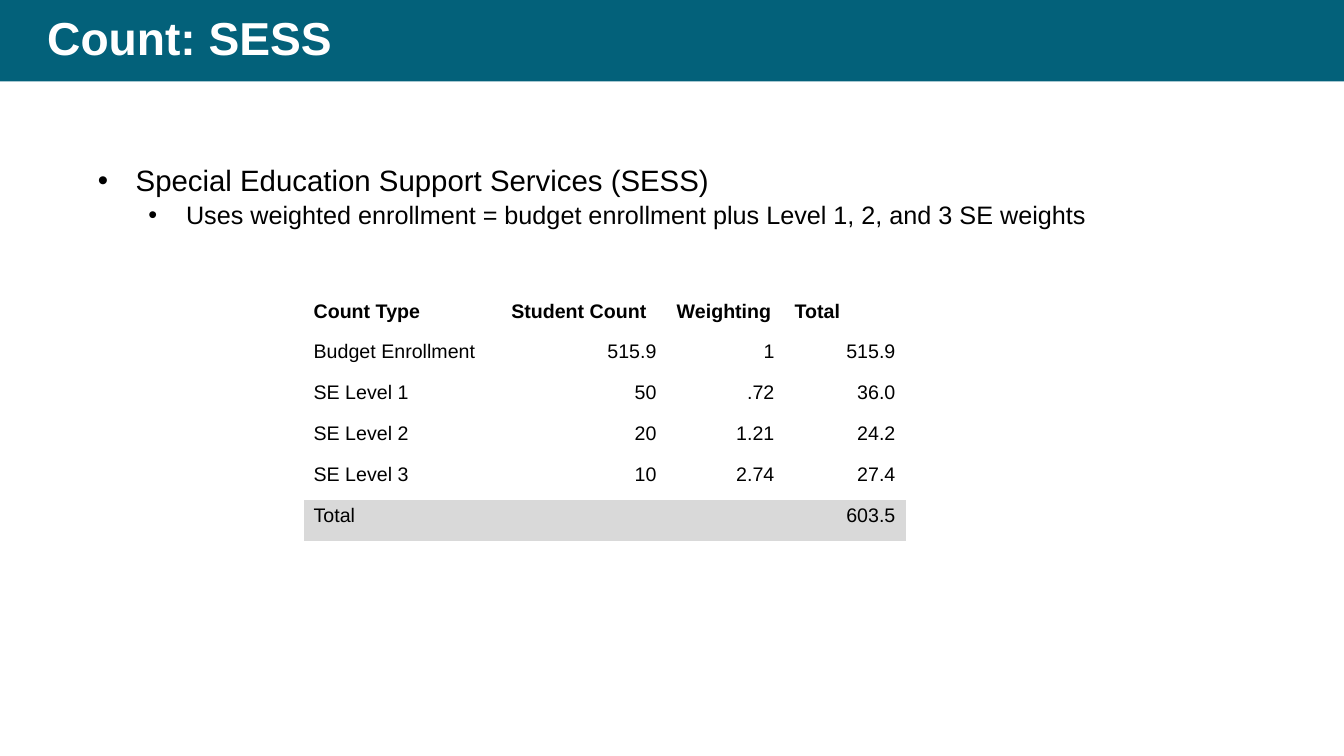
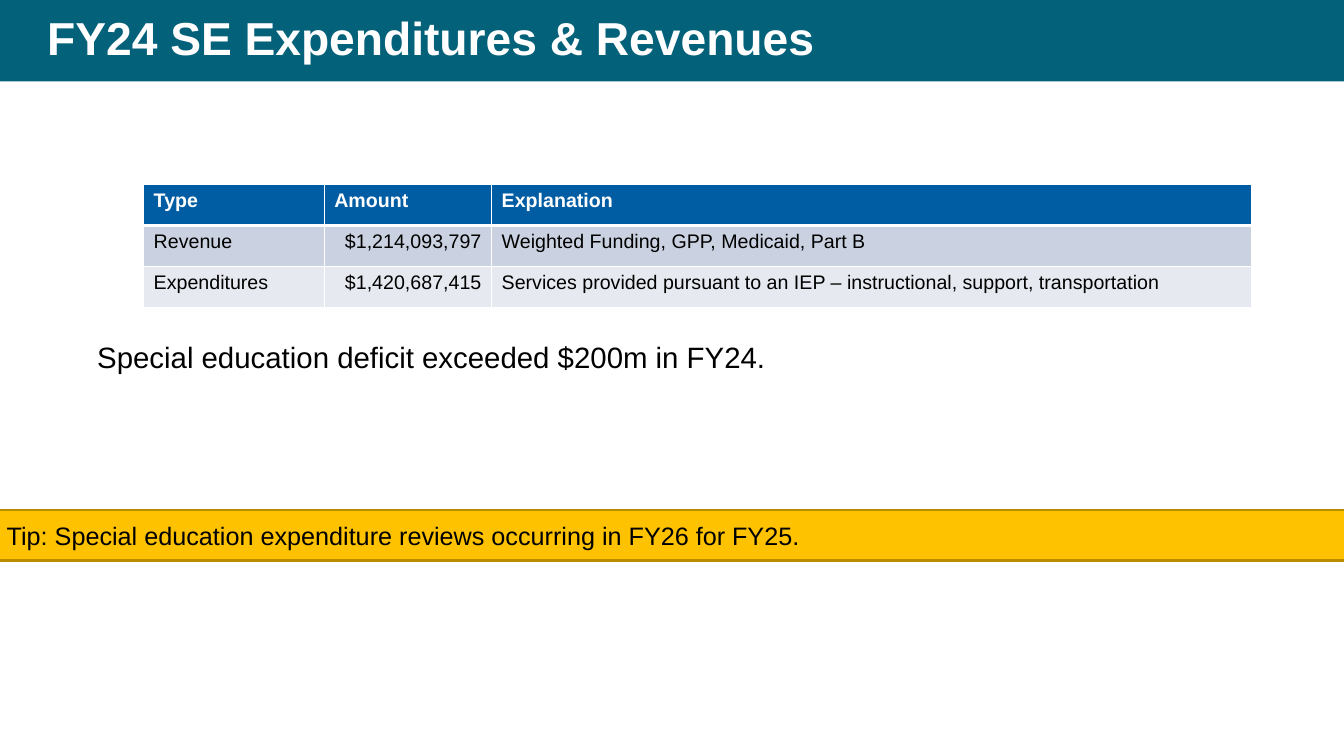
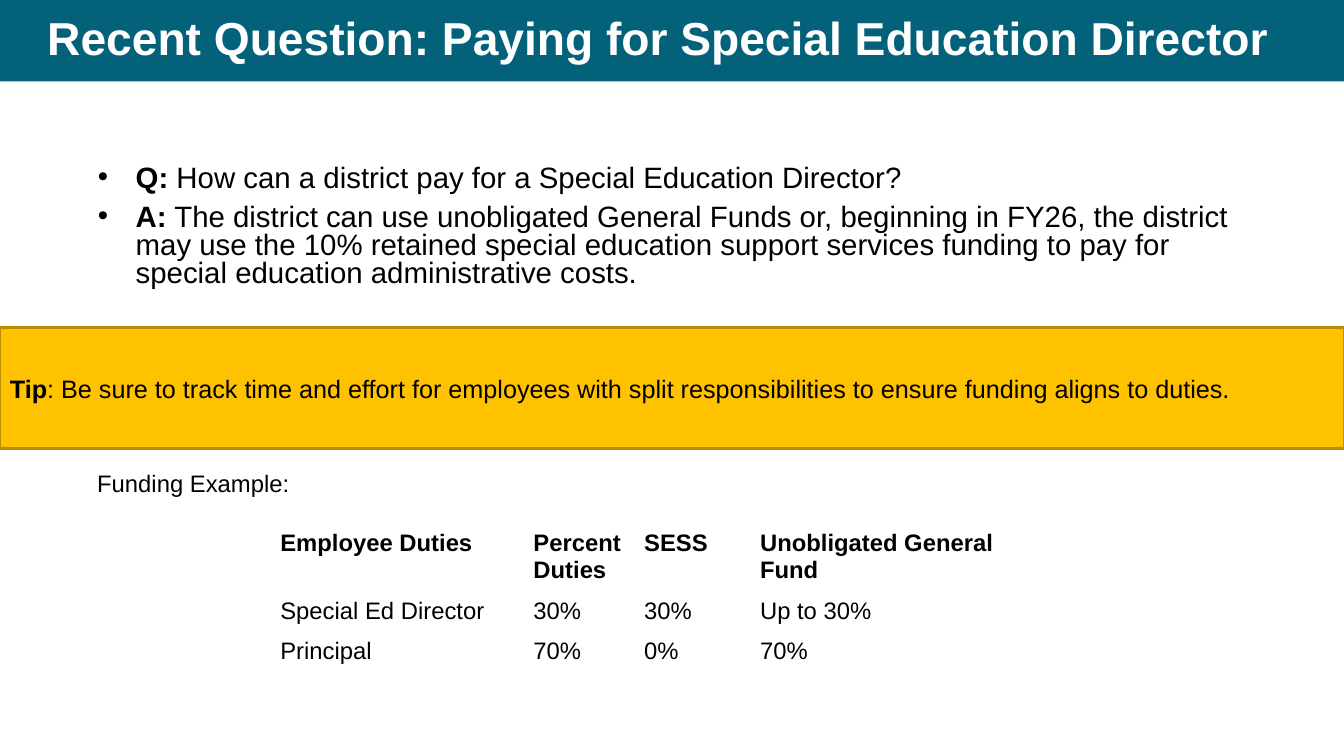
from lxml.etree import SubElement
from pptx import Presentation
from pptx.dml.color import RGBColor
from pptx.enum.shapes import MSO_SHAPE
from pptx.enum.text import MSO_ANCHOR, PP_ALIGN
from pptx.oxml.ns import qn
from pptx.util import Cm, Pt

# Shared look
FONT = "Arial"
COLORS = {
    "band": "03617A", "white": "FFFFFF", "text": "000000",
    "tip": "FFC200", "tip_edge": "BA8D00", "total": "D9D9D9",
    "header": "005CA3", "row_dark": "CAD1E0", "row_light": "E6E9F0",
}
SLIDE_W, SLIDE_H = 33.87, 19.05
BAND_H = 2.05
BODY_LEFT, BODY_TOP, BODY_W = 1.9, 4.06, 30.05
ROW_H = 1.03
NOTE_INDENT = 0.3


def rgb(name):
    return RGBColor.from_string(COLORS[name])


def write(paragraph, text, size, color="text", bold=False, lead=""):
    """Set a paragraph's text, with an optional bold lead-in."""
    paragraph.text = lead or text
    if lead:
        paragraph.add_run().text = text
    for index, run in enumerate(paragraph.runs):
        run.font.name = FONT
        run.font.size = Pt(size)
        run.font.color.rgb = rgb(color)
        run.font.bold = bold or (bool(lead) and index == 0)


def space(paragraph, line, before=0, left=0, hanging=0):
    paragraph.line_spacing = line
    paragraph.space_before = Pt(before)
    props = paragraph._p.get_or_add_pPr()
    props.set("marL", str(int(Cm(left))))
    props.set("indent", str(-int(Cm(hanging))))


def add_bullet(paragraph):
    props = paragraph._p.get_or_add_pPr()
    color = SubElement(props, qn("a:buClr"))
    SubElement(color, qn("a:srgbClr")).set("val", COLORS["text"])
    SubElement(props, qn("a:buFont")).set("typeface", FONT)
    SubElement(props, qn("a:buChar")).set("char", "•")


def add_text(slide, left, top, width, height):
    frame = slide.shapes.add_textbox(Cm(left), Cm(top), Cm(width), Cm(height)).text_frame
    frame.word_wrap = True
    return frame


def add_bar(slide, left, top, width, height, fill, edge=None):
    bar = slide.shapes.add_shape(
        MSO_SHAPE.RECTANGLE, Cm(left), Cm(top), Cm(width), Cm(height))
    bar.shadow.inherit = False
    bar.fill.solid()
    bar.fill.fore_color.rgb = rgb(fill)
    if edge:
        bar.line.color.rgb = rgb(edge)
        bar.line.width = Pt(2)
    else:
        bar.line.fill.background()
    return bar


def titled_slide(deck, title):
    slide = deck.slides.add_slide(deck.slide_layouts[6])
    add_bar(slide, 0, 0, SLIDE_W, BAND_H, "band")
    heading = add_text(slide, 0.94, 0, 31.3, BAND_H)
    heading.vertical_anchor = MSO_ANCHOR.MIDDLE
    write(heading.paragraphs[0], title, 33, "white", bold=True)
    space(heading.paragraphs[0], 0.9)
    return slide


def bullet_list(slide, top, height, items, line, before):
    """Items are (level, bold lead, text)."""
    frame = add_text(slide, BODY_LEFT, top, BODY_W, height)
    for index, (level, lead, text) in enumerate(items):
        item = frame.add_paragraph() if index else frame.paragraphs[0]
        write(item, text, 21 - 3 * level, lead=lead)
        item.level = level
        space(item, line, before, left=1.27 * (level + 1), hanging=0.95)
        add_bullet(item)


def note(slide, top, height, text, size):
    frame = add_text(slide, BODY_LEFT, top, BODY_W, height)
    write(frame.paragraphs[0], text, size)
    space(frame.paragraphs[0], 0.9, left=NOTE_INDENT)


def tip_bar(slide, left, top, width, height, text, lead=""):
    bar = add_bar(slide, left, top, width, height, "tip", "tip_edge")
    frame = bar.text_frame
    frame.word_wrap = True
    frame.vertical_anchor = MSO_ANCHOR.MIDDLE
    write(frame.paragraphs[0], text, 18, lead=lead)
    frame.paragraphs[0].alignment = PP_ALIGN.LEFT


def cell_borders(cell, grid, bottom):
    """White grid lines with a chosen bottom width, or no lines."""
    props = cell._tc.get_or_add_tcPr()
    for index, side in enumerate(("lnL", "lnR", "lnT", "lnB")):
        width = bottom if side == "lnB" else 1
        line = props.makeelement(qn("a:" + side), {"w": str(int(Pt(width)))})
        if grid:
            fill = SubElement(line, qn("a:solidFill"))
            SubElement(fill, qn("a:srgbClr")).set("val", COLORS["white"])
        else:
            SubElement(line, qn("a:noFill"))
        props.insert(index, line)


def data_table(slide, left, top, columns, rows, size, fills=None,
               header_color="text", right_columns=(), grid=False):
    """Fills maps a row number to its colour; other rows stay clear."""
    fills = fills or {}
    table = slide.shapes.add_table(
        len(rows), len(columns), Cm(left), Cm(top),
        Cm(sum(columns)), Cm(ROW_H * len(rows))).table
    table.first_row = False
    table.horz_banding = False
    for column, width in zip(table.columns, columns):
        column.width = Cm(width)
    for r, values in enumerate(rows):
        table.rows[r].height = Cm(ROW_H)
        for c, value in enumerate(values):
            cell = table.cell(r, c)
            if r in fills:
                cell.fill.solid()
                cell.fill.fore_color.rgb = rgb(fills[r])
            else:
                cell.fill.background()
            cell_borders(cell, grid, bottom=1 if r else 3)
            cell.text_frame.text = value
            for paragraph in cell.text_frame.paragraphs:
                write(paragraph, paragraph.text, size,
                      "text" if r else header_color, bold=r == 0)
                if r and c in right_columns:
                    paragraph.alignment = PP_ALIGN.RIGHT


def count_slide(deck):
    slide = titled_slide(deck, "Count: SESS")
    bullet_list(slide, BODY_TOP, 12.1, [
        (0, "", "Special Education Support Services (SESS)"),
        (1, "", "Uses weighted enrollment = budget enrollment plus "
                "Level 1, 2, and 3 SE weights"),
    ], line=0.9, before=3.8)
    data_table(slide, 7.65, 7.44, [4.98, 4.17, 2.97, 3.05], [
        ["Count Type", "Student Count", "Weighting", "Total"],
        ["Budget Enrollment", "515.9", "1", "515.9"],
        ["SE Level 1", "50", ".72", "36.0"],
        ["SE Level 2", "20", "1.21", "24.2"],
        ["SE Level 3", "10", "2.74", "27.4"],
        ["Total", "", "", "603.5"],
    ], 14, fills={5: "total"}, right_columns=(1, 2, 3))


def budget_slide(deck):
    slide = titled_slide(deck, "FY24 SE Expenditures & Revenues")
    data_table(slide, 3.62, 4.65, [4.55, 4.22, 19.14], [
        ["Type", "Amount", "Explanation"],
        ["Revenue", "$1,214,093,797", "Weighted Funding, GPP, Medicaid, Part B"],
        ["Expenditures", "$1,420,687,415",
         "Services provided pursuant to an IEP – instructional, support, transportation"],
    ], 14, fills={0: "header", 1: "row_dark", 2: "row_light"},
        header_color="white", right_columns=(1,), grid=True)
    note(slide, 8.53, 2.2, "Special education deficit exceeded $200m in FY24.", 21)
    tip_bar(slide, -0.08, 12.85, 34.02, 1.27,
            "Tip: Special education expenditure reviews occurring in FY26 for FY25.")


def question_slide(deck):
    slide = titled_slide(deck, "Recent Question: Paying for Special Education Director")
    bullet_list(slide, BODY_TOP, 4.47, [
        (0, "Q:", " How can a district pay for a Special Education Director?"),
        (0, "A:", " The district can use unobligated General Funds or, beginning in "
                  "FY26, the district may use the 10% retained special education "
                  "support services funding to pay for special education "
                  "administrative costs."),
    ], line=0.8, before=7.5)
    tip_bar(slide, 0, 8.26, SLIDE_W, 3.05,
            ": Be sure to track time and effort for employees with split "
            "responsibilities to ensure funding aligns to duties.", lead="Tip")
    note(slide, 11.76, 1.5, "Funding Example:", 17)
    data_table(slide, 6.81, 13.23, [6.38, 2.79, 2.92, 6.73], [
        ["Employee Duties", "Percent\nDuties", "SESS", "Unobligated General Fund"],
        ["Special Ed Director", "30%", "30%", "Up to 30%"],
        ["Principal", "70%", "0%", "70%"],
    ], 17)


def main():
    deck = Presentation()
    deck.slide_width, deck.slide_height = Cm(SLIDE_W), Cm(SLIDE_H)
    for build in (count_slide, budget_slide, question_slide):
        build(deck)
    deck.save("out.pptx")


if __name__ == "__main__":
    main()
